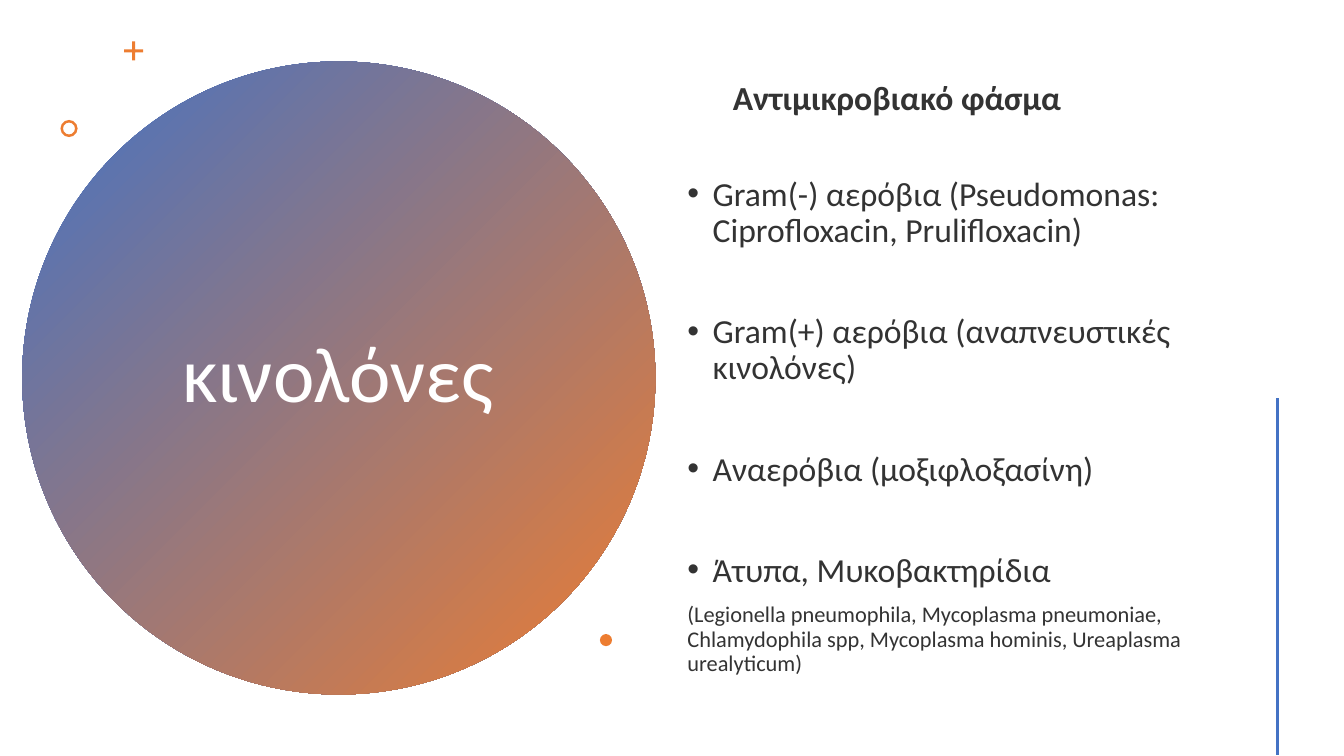
from lxml.etree import SubElement
from pptx import Presentation
from pptx.dml.color import RGBColor
from pptx.enum.shapes import MSO_CONNECTOR, MSO_SHAPE
from pptx.enum.text import MSO_ANCHOR, PP_ALIGN
from pptx.oxml.ns import qn
from pptx.util import Inches, Pt

BLUE = RGBColor(0x44, 0x72, 0xC4)
ORANGE = RGBColor(0xED, 0x7D, 0x31)
WHITE = RGBColor(0xFF, 0xFF, 0xFF)
DARK = RGBColor(0x33, 0x33, 0x33)

# Content
TITLE = "κινολόνες"
HEADING = "Αντιμικροβιακό φάσμα"
ITEMS = [
    "Gram(-) αερόβια (Pseudomonas: Ciprofloxacin, Prulifloxacin)",
    "Gram(+) αερόβια (αναπνευστικές κινολόνες)",
    "Αναερόβια (μοξιφλοξασίνη)",
    "Άτυπα, Μυκοβακτηρίδια",
]
NOTE = ("(Legionella pneumophila, Mycoplasma pneumoniae, Chlamydophila spp, "
        "Mycoplasma hominis, Ureaplasma urealyticum)")

# Small ornaments: shape, left, top, size, adjustment
MARKS = [
    (MSO_SHAPE.CROSS, 1.23, 0.41, 0.19, 0.42),
    (MSO_SHAPE.DONUT, 0.6, 1.19, 0.17, 0.15),
    (MSO_SHAPE.OVAL, 5.95, 6.29, 0.12, None),
]

# Paragraph styles: indent and hang in inches, space before in points
HEAD = {"indent": 0.45, "font": {"size": Pt(24), "bold": True}}
ITEM = {"indent": 0.25, "hang": -0.25, "bullet": "•", "before": 46.4,
        "font": {"size": Pt(24)}}
FIRST = {**ITEM, "before": 42}
SMALL = {"before": 10, "font": {"size": Pt(16)}}
BIG = {"align": PP_ALIGN.CENTER, "font": {"size": Pt(56)}}

deck = Presentation()
deck.slide_width, deck.slide_height = Inches(13.33), Inches(7.5)
slide = deck.slides.add_slide(deck.slide_layouts[6])


def add_mark(kind, left, top, size):
    mark = slide.shapes.add_shape(
        kind, Inches(left), Inches(top), Inches(size), Inches(size))
    mark.shadow.inherit = False
    mark.line.fill.background()
    return mark


def add_text(box, color, paras):
    frame = slide.shapes.add_textbox(*map(Inches, box)).text_frame
    frame.word_wrap = True
    frame.vertical_anchor = MSO_ANCHOR.MIDDLE
    for i, (text, style) in enumerate(paras):
        para = frame.add_paragraph() if i else frame.paragraphs[0]
        para.line_spacing = 0.9
        para.space_before = Pt(style.get("before", 0))
        para.alignment = style.get("align", PP_ALIGN.LEFT)
        props = para._p.get_or_add_pPr()
        props.set("marL", str(Inches(style.get("indent", 0))))
        props.set("indent", str(Inches(style.get("hang", 0))))
        if "bullet" in style:
            SubElement(props, qn("a:buFont")).set("typeface", "Arial")
            SubElement(props, qn("a:buChar")).set("char", style["bullet"])
        run = para.add_run()
        run.text = text
        run.font.name = "Calibri"
        run.font.color.rgb = color
        for key, value in style["font"].items():
            setattr(run.font, key, value)


# Gradient disc with the title
disc = add_mark(MSO_SHAPE.OVAL, 0.22, 0.61, 6.28)
disc.fill.gradient()
disc.fill.gradient_angle = 315
for stop, color in zip(disc.fill.gradient_stops, (BLUE, ORANGE)):
    stop.color.rgb = color
add_text((1.36, 1.41, 3.99, 4.67), WHITE, [(TITLE, BIG)])

# Ornaments
for kind, left, top, size, adjust in MARKS:
    mark = add_mark(kind, left, top, size)
    mark.fill.solid()
    mark.fill.fore_color.rgb = ORANGE
    if adjust is not None:
        mark.adjustments[0] = adjust

# Body text
styles = [FIRST] + [ITEM] * (len(ITEMS) - 1)
add_text((6.72, 0.57, 5.75, 6.38), DARK,
         [(HEADING, HEAD), *zip(ITEMS, styles), (NOTE, SMALL)])

# Rule at the right
rule = slide.shapes.add_connector(
    MSO_CONNECTOR.STRAIGHT,
    Inches(12.67), Inches(3.95), Inches(12.67), Inches(7.49))
rule.line.color.rgb = BLUE
rule.line.width = Pt(2)
SubElement(rule._element.spPr, qn("a:effectLst"))

deck.save("out.pptx")
